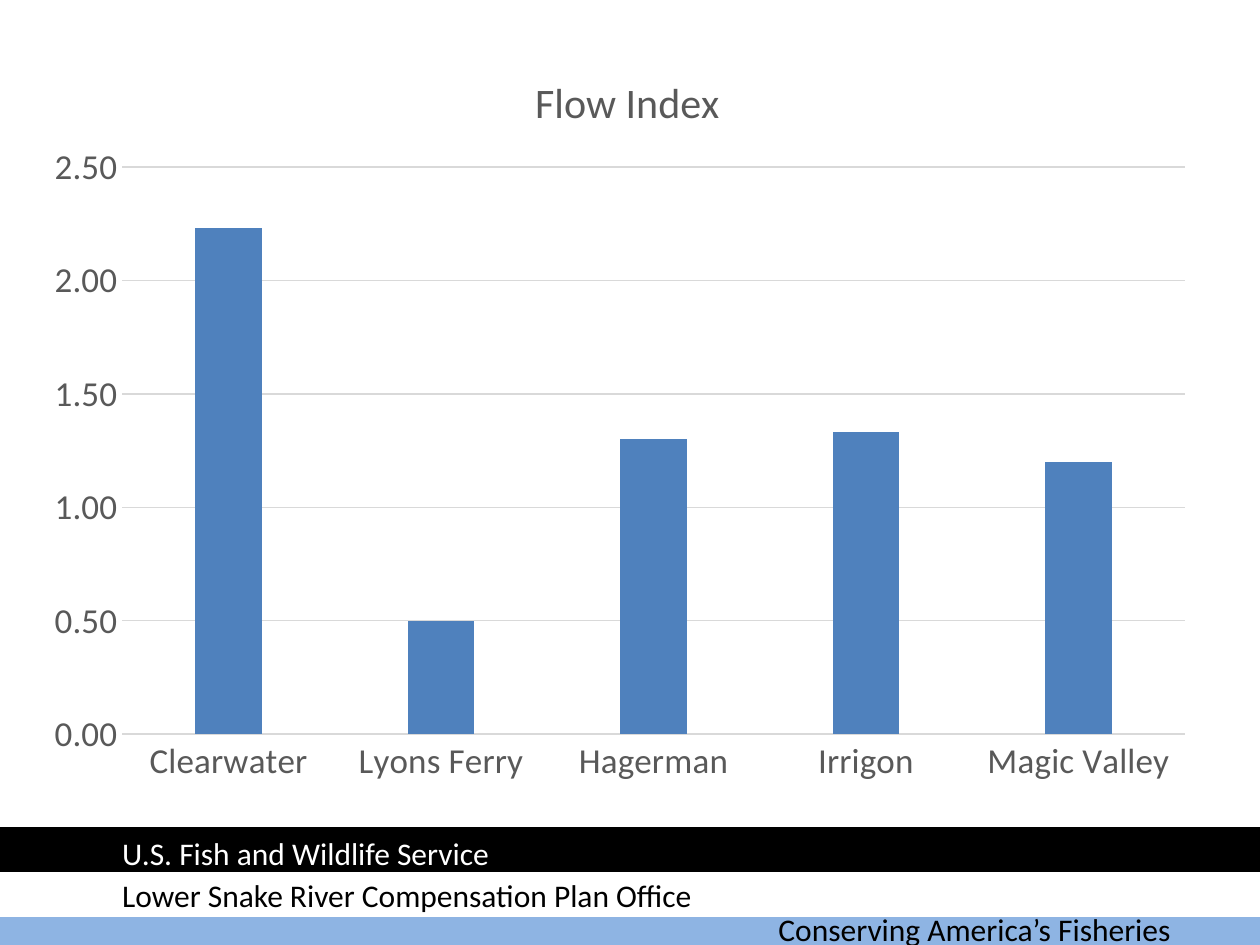
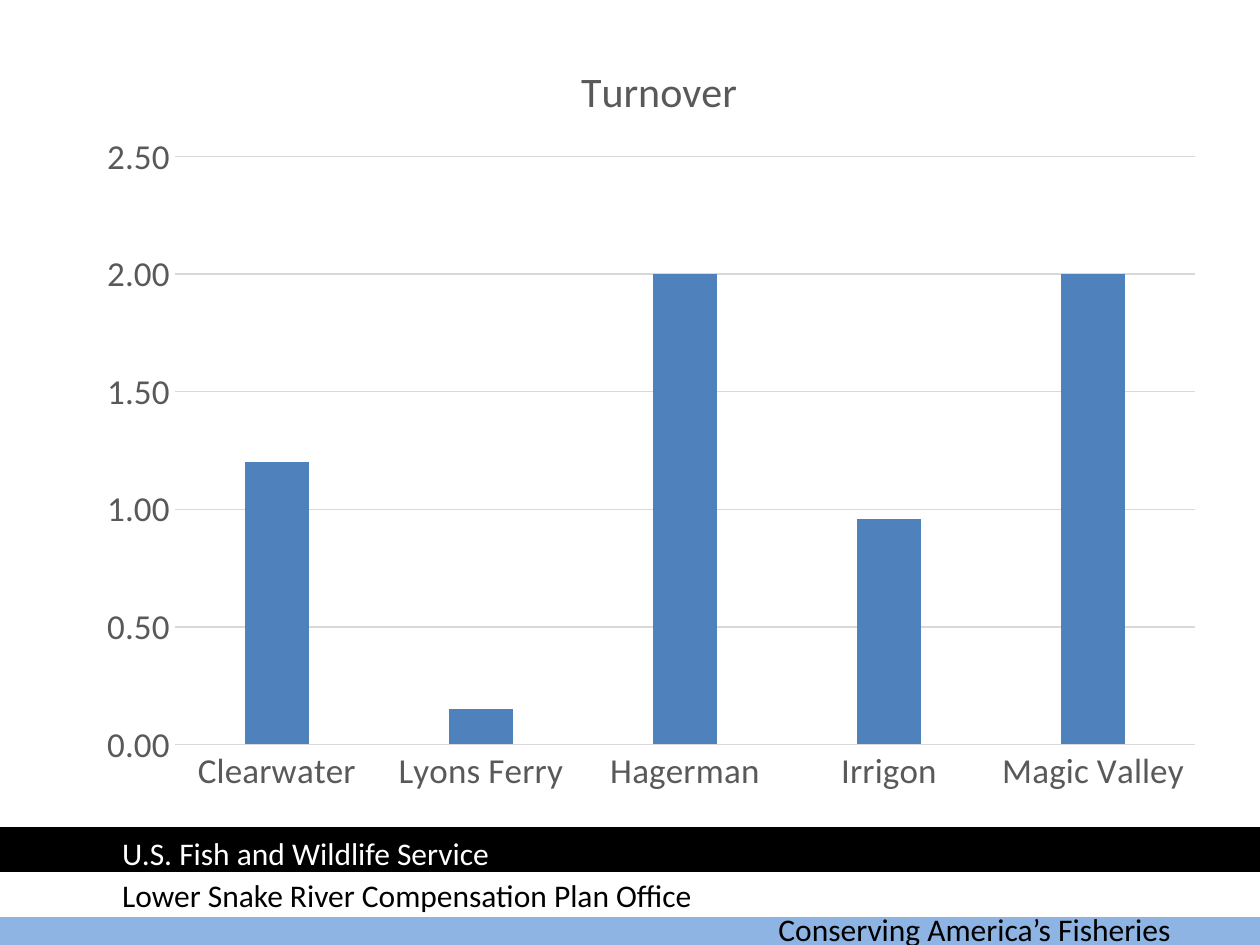
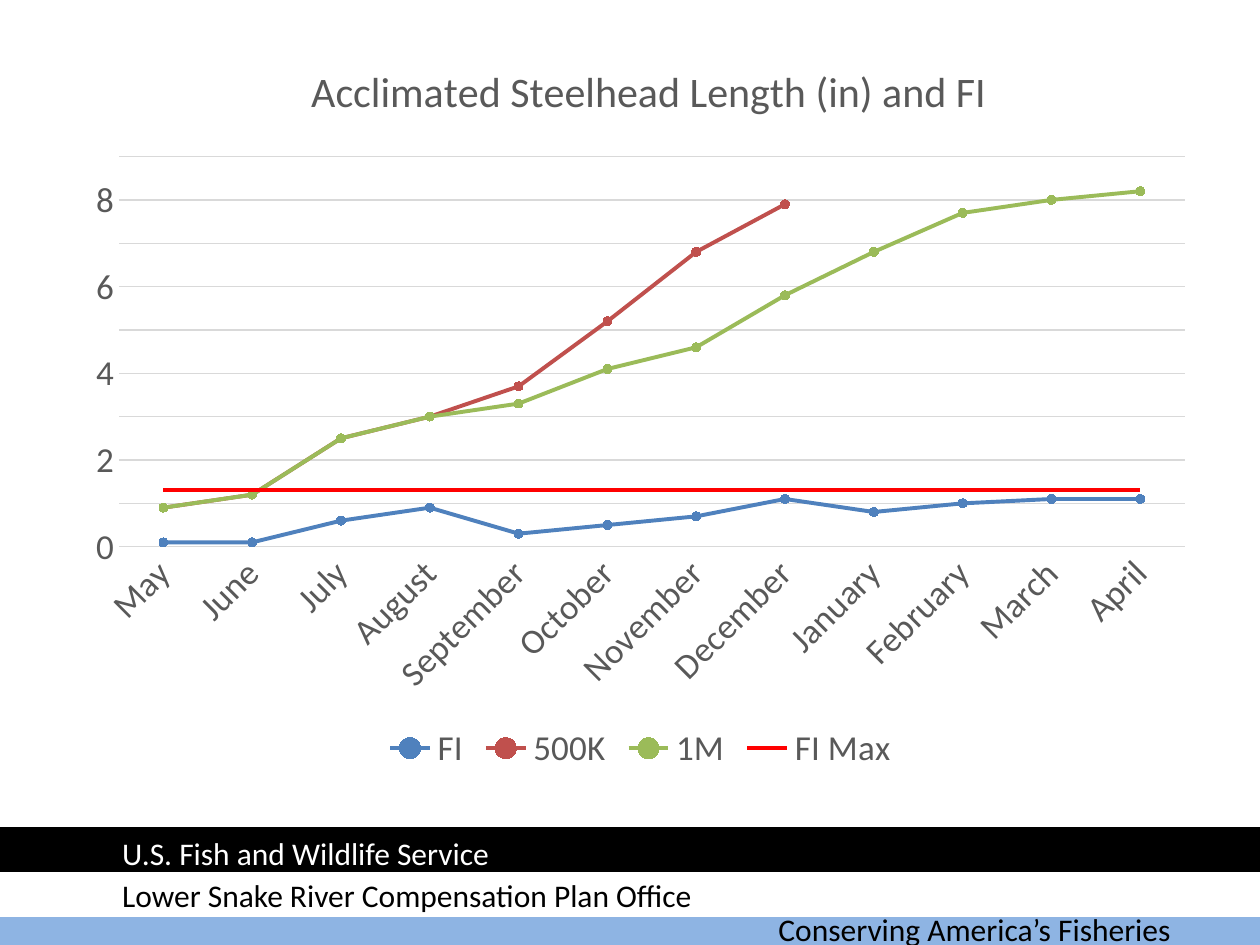
from dataclasses import dataclass

from pptx import Presentation
from pptx.chart.data import CategoryChartData
from pptx.dml.color import RGBColor
from pptx.enum.chart import XL_CHART_TYPE, XL_LEGEND_POSITION, XL_MARKER_STYLE, XL_TICK_MARK
from pptx.enum.shapes import MSO_SHAPE
from pptx.enum.text import MSO_AUTO_SIZE
from pptx.oxml import parse_xml
from pptx.oxml.ns import nsdecls
from pptx.util import Pt

COLUMNS = XL_CHART_TYPE.COLUMN_CLUSTERED
LINES = XL_CHART_TYPE.LINE_MARKERS
BOTTOM = XL_LEGEND_POSITION.BOTTOM
CIRCLE = XL_MARKER_STYLE.CIRCLE
NO_MARKER = XL_MARKER_STYLE.NONE
NO_TICK = XL_TICK_MARK.NONE
RECTANGLE = MSO_SHAPE.RECTANGLE
GROW = MSO_AUTO_SIZE.SHAPE_TO_FIT_TEXT


@dataclass(frozen=True)
class Theme:
    """Colours and type sizes shared by all slides."""
    font: str = "Calibri"
    black: str = "000000"
    white: str = "FFFFFF"
    sky: str = "8EB4E3"
    label: str = "595959"
    grid: str = "D9D9D9"
    blue: str = "4F81BD"
    brick: str = "C0504D"
    green: str = "9BBB59"
    red: str = "FF0000"
    title_size: float = 24
    label_size: float = 20
    footer_size: float = 18


THEME = Theme()
SLIDE_SIZE = (720, 540)
FOOTER_BOX = (0, 473.75, 720, 66.25)
BAND_HEIGHT = 23.75
FOOTER_BANDS = ((42.5, THEME.sky), (25.25, THEME.white), (0, THEME.black))
FOOTER_LINES = (
    ("Conserving America’s Fisheries", 437.75, 42.5, 264.25, THEME.black),
    ("U.S. Fish and Wildlife Service", 62.75, -0.75, 299.5, THEME.white),
    ("Lower Snake River Compensation Plan Office", 62.75, 23, 357.75, THEME.black),
)
TITLE_TOP, PLOT_TOP, PLOT_RIGHT = 19.75, 77.5, 13

HATCHERIES = ("Clearwater", "Lyons Ferry", "Hagerman", "Irrigon", "Magic Valley")
MONTHS = ("May", "June", "July", "August", "September", "October", "November",
          "December", "January", "February", "March", "April")
HATCHERY_CHARTS = (
    ((18, 18, 672, 438), "Flow Index", 105, "Series 1", (2.23, 0.5, 1.3, 1.33, 1.2)),
    ((48, 12, 648, 450), "Turnover", 88.5, "Turnover", (1.2, 0.15, 2, 0.96, 2)),
)
GROWTH_BOX = (42, 12, 648, 432)
GROWTH = (
    ("FI", (0.1, 0.1, 0.6, 0.9, 0.3, 0.5, 0.7, 1.1, 0.8, 1, 1.1, 1.1), THEME.blue, CIRCLE),
    ("500K", (0.9, 1.2, 2.5, 3, 3.7, 5.2, 6.8, 7.9) + (None,) * 4, THEME.brick, CIRCLE),
    ("1M", (0.9, 1.2, 2.5, 3, 3.3, 4.1, 4.6, 5.8, 6.8, 7.7, 8, 8.2), THEME.green, CIRCLE),
    ("FI Max", (1.3,) * len(MONTHS), THEME.red, NO_MARKER),
)


def assign(target, **values):
    """Set several attributes of one object."""
    for key, value in values.items():
        setattr(target, key, value)


def style_font(font, size, color):
    """Apply the theme font in a size and colour."""
    assign(font, name=THEME.font, size=Pt(size), bold=False)
    font.color.rgb = RGBColor.from_string(color)


def style_line(line, color, width):
    """Give a line a solid colour and a width."""
    line.color.rgb = RGBColor.from_string(color)
    line.width = Pt(width)


def fill_solid(fill, color):
    """Fill with one colour."""
    fill.solid()
    fill.fore_color.rgb = RGBColor.from_string(color)


def add_footer(slide, box):
    """Stack the three footer bands and their wording in the box."""
    left, top, width, _ = box
    for offset, color in FOOTER_BANDS:
        band = slide.shapes.add_shape(
            RECTANGLE, Pt(left), Pt(top + offset), Pt(width), Pt(BAND_HEIGHT))
        band.shadow.inherit = False
        fill_solid(band.fill, color)
        style_line(band.line, color, 2)
    for wording, indent, offset, line_width, color in FOOTER_LINES:
        caption = slide.shapes.add_textbox(
            Pt(left + indent), Pt(top + offset), Pt(line_width), Pt(29))
        assign(caption.text_frame, word_wrap=True, auto_size=GROW, text=wording)
        style_font(caption.text_frame.paragraphs[0].font, THEME.footer_size, color)


def set_layout(element, index, x, y, size=None):
    """Fix the place of a chart part, in fractions of the chart."""
    for old in element.xpath("c:layout"):
        element.remove(old)
    values = {"xMode": "edge", "yMode": "edge", "x": x, "y": y}
    target = ""
    if size:
        target = '<c:layoutTarget val="inner"/>'
        values.update(w=size[0], h=size[1])
    entries = "".join(f'<c:{key} val="{value}"/>' for key, value in values.items())
    element.insert(index, parse_xml(
        f'<c:layout {nsdecls("c")}><c:manualLayout>{target}{entries}'
        "</c:manualLayout></c:layout>"))


def add_titled_chart(slide, box, kind, categories, series, title, title_width,
                     plot_left, plot_bottom, scale):
    """Add a chart with the shared title, axes and plot margins to the box."""
    data = CategoryChartData()
    data.categories = categories
    for name, values in series:
        data.add_series(name, values)
    chart = slide.shapes.add_chart(kind, *map(Pt, box), data).chart
    _, _, width, height = box
    style_font(chart.font, THEME.label_size, THEME.label)

    assign(chart, has_title=True, has_legend=False)
    heading = chart.chart_title
    heading.text_frame.text = title
    style_font(heading.text_frame.paragraphs[0].runs[0].font, THEME.title_size, THEME.label)
    set_layout(heading.element, 1, (width - title_width) / 2 / width, TITLE_TOP / height)
    set_layout(chart.element.xpath("c:chart/c:plotArea")[0], 0,
               plot_left / width, PLOT_TOP / height,
               ((width - plot_left - PLOT_RIGHT) / width,
                (height - PLOT_TOP - plot_bottom) / height))

    for axis in (chart.category_axis, chart.value_axis):
        assign(axis, major_tick_mark=NO_TICK, minor_tick_mark=NO_TICK)
        style_font(axis.tick_labels.font, THEME.label_size, THEME.label)
    style_line(chart.category_axis.format.line, THEME.grid, 0.75)
    assign(chart.value_axis, minimum_scale=0, has_major_gridlines=True, **scale)
    chart.value_axis.format.line.fill.background()
    style_line(chart.value_axis.major_gridlines.format.line, THEME.grid, 0.75)
    chart.plots[0].vary_by_categories = False
    return chart


def add_hatchery_chart(slide, box, title, title_width, measure, values):
    """Compare one measure across the hatcheries in columns."""
    chart = add_titled_chart(slide, box, COLUMNS, HATCHERIES, [(measure, values)],
                             title, title_width, 52, 36.5,
                             {"maximum_scale": 2.5, "major_unit": 0.5})
    assign(chart.value_axis.tick_labels, number_format="0.00", number_format_is_linked=False)
    assign(chart.plots[0], gap_width=219, overlap=-27)
    fill_solid(chart.plots[0].series[0].format.fill, THEME.blue)


def add_growth_chart(slide, box):
    """Plot monthly steelhead length and flow index as lines."""
    chart = add_titled_chart(slide, box, LINES, MONTHS, [row[:2] for row in GROWTH],
                             "Acclimated Steelhead Length (in) and FI", 385, 26, 131.5,
                             {"maximum_scale": 9, "major_unit": 1})
    chart.element.xpath(".//c:catAx/c:txPr/a:bodyPr")[0].set("rot", "-2700000")
    chart.has_legend = True
    assign(chart.legend, position=BOTTOM, include_in_layout=False)
    style_font(chart.legend.font, THEME.label_size, THEME.label)
    for trend, (_, _, color, marker) in zip(chart.plots[0].series, GROWTH):
        trend.smooth = False
        style_line(trend.format.line, color, 2.25)
        trend.marker.style = marker
        if marker == CIRCLE:
            trend.marker.size = 5
            fill_solid(trend.marker.format.fill, color)
            style_line(trend.marker.format.line, color, 0.75)


def add_footed_slide(deck):
    """Add a blank slide that carries the footer."""
    slide = deck.slides.add_slide(deck.slide_layouts[6])
    add_footer(slide, FOOTER_BOX)
    return slide


def main():
    """Build the three slides and save them."""
    deck = Presentation()
    deck.slide_width, deck.slide_height = map(Pt, SLIDE_SIZE)
    for content in HATCHERY_CHARTS:
        add_hatchery_chart(add_footed_slide(deck), *content)
    add_growth_chart(add_footed_slide(deck), GROWTH_BOX)
    deck.save("out.pptx")


if __name__ == "__main__":
    main()
